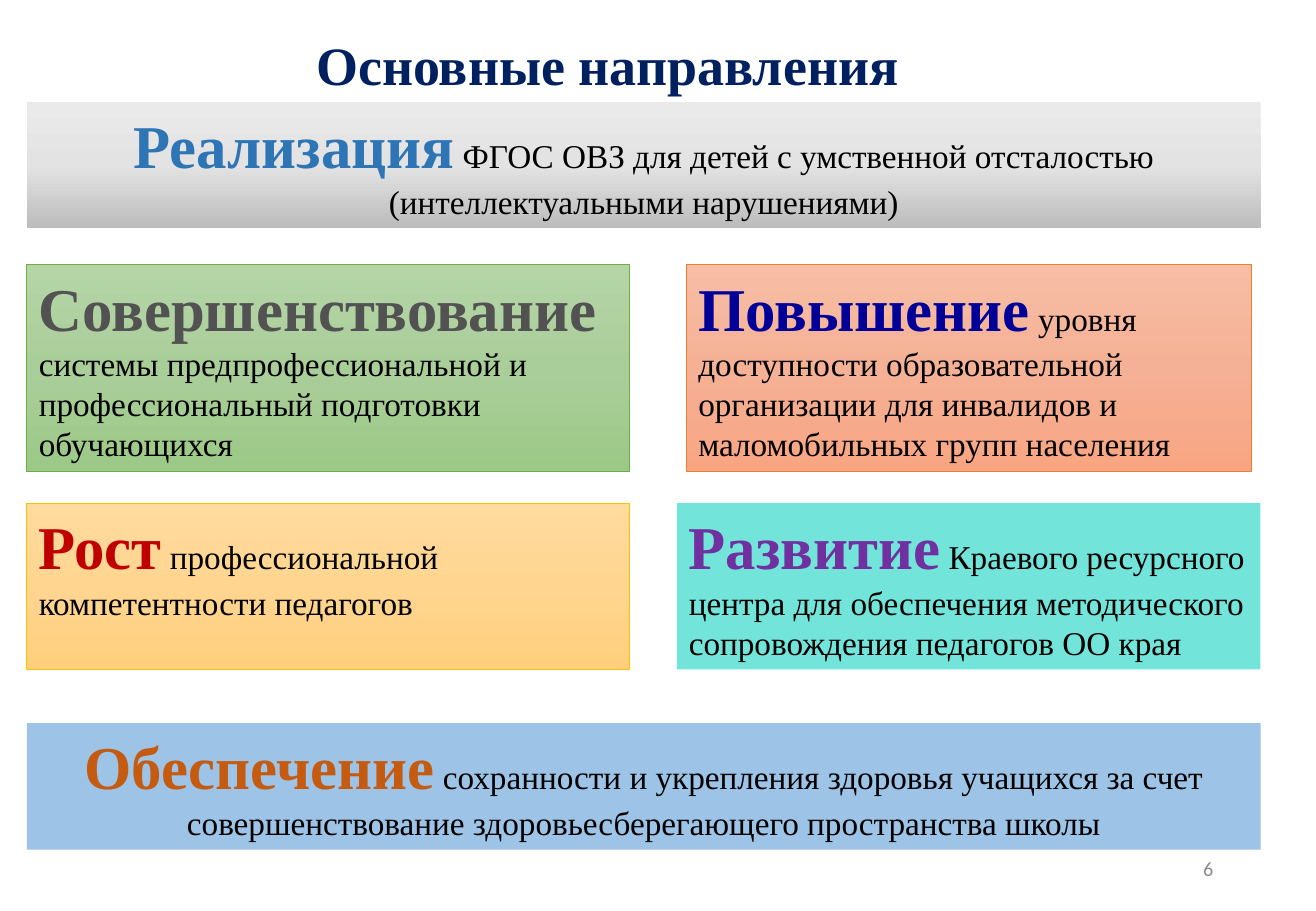
"""Builds the slide of main directions: a title, six coloured cards and a slide number."""
from copy import deepcopy

from pptx import Presentation
from pptx.dml.color import RGBColor
from pptx.enum.shapes import MSO_SHAPE
from pptx.enum.text import MSO_ANCHOR, MSO_AUTO_SIZE, PP_ALIGN
from pptx.oxml.ns import qn
from pptx.util import Pt

RECTANGLE = MSO_SHAPE.RECTANGLE
TOP, MIDDLE = MSO_ANCHOR.TOP, MSO_ANCHOR.MIDDLE
LEFT, CENTER, RIGHT = PP_ALIGN.LEFT, PP_ALIGN.CENTER, PP_ALIGN.RIGHT
NO_AUTOFIT = MSO_AUTO_SIZE.NONE

SERIF = "Times New Roman"
BLACK = RGBColor(0x00, 0x00, 0x00)
NAVY = RGBColor(0x00, 0x20, 0x60)
NUMBER_GRAY = RGBColor(0x8C, 0x8C, 0x8C)
BLUE = RGBColor(0x2E, 0x75, 0xB6)
DARK_GRAY = RGBColor(0x52, 0x52, 0x52)
DEEP_BLUE = RGBColor(0x00, 0x00, 0x99)
RED = RGBColor(0xC0, 0x00, 0x00)
PURPLE = RGBColor(0x70, 0x30, 0xA0)
RUST = RGBColor(0xC5, 0x5A, 0x11)
GREEN_LINE = RGBColor(0x70, 0xAD, 0x47)
ORANGE_LINE = RGBColor(0xED, 0x7D, 0x31)
GOLD_LINE = RGBColor(0xFF, 0xC0, 0x00)
GRAY_FILL = [RGBColor(0xEB, 0xEA, 0xEA), RGBColor(0xE4, 0xE3, 0xE3), RGBColor(0xBD, 0xBC, 0xBC)]
GREEN_FILL = [RGBColor(0xB5, 0xD5, 0xA7), RGBColor(0xAA, 0xCE, 0x9A), RGBColor(0x9C, 0xC9, 0x87)]
ORANGE_FILL = [RGBColor(0xF7, 0xBD, 0xA5), RGBColor(0xF5, 0xB1, 0x96), RGBColor(0xF8, 0xA5, 0x82)]
GOLD_FILL = [RGBColor(0xFF, 0xDB, 0x9E), RGBColor(0xFF, 0xD5, 0x90), RGBColor(0xFF, 0xD0, 0x7C)]
TURQUOISE_FILL = [RGBColor(0x72, 0xE4, 0xD9)]
SKY_FILL = [RGBColor(0x9D, 0xC3, 0xE6)]

MARGIN = 15.9
BAR_WIDTH, BAR_HEIGHT = 731.4, 75
LEFT_WIDTH = 357.2
UPPER_TOP, UPPER_HEIGHT = 156.9, 122.6
LOWER_TOP, LOWER_HEIGHT = 298.3, 98.6

CARDS = [
    ((MARGIN, 60.5, BAR_WIDTH, BAR_HEIGHT), GRAY_FILL, None, CENTER, BLUE, "Реализация",
     "ФГОС ОВЗ для детей с умственной отсталостью (интеллектуальными нарушениями)"),
    ((MARGIN, UPPER_TOP, LEFT_WIDTH, UPPER_HEIGHT), GREEN_FILL, GREEN_LINE, LEFT, DARK_GRAY,
     "Совершенствование",
     "системы предпрофессиональной и профессиональный подготовки обучающихся"),
    ((406.8, UPPER_TOP, 334.8, UPPER_HEIGHT), ORANGE_FILL, ORANGE_LINE, LEFT, DEEP_BLUE,
     "Повышение",
     "уровня доступности образовательной организации для инвалидов и маломобильных групп населения"),
    ((MARGIN, LOWER_TOP, LEFT_WIDTH, LOWER_HEIGHT), GOLD_FILL, GOLD_LINE, LEFT, RED, "Рост",
     "профессиональной компетентности педагогов"),
    ((401.2, LOWER_TOP, 345.9, LOWER_HEIGHT), TURQUOISE_FILL, None, LEFT, PURPLE, "Развитие",
     "Краевого ресурсного центра для обеспечения методического сопровождения педагогов ОО края"),
    ((MARGIN, 428.6, BAR_WIDTH, BAR_HEIGHT), SKY_FILL, None, CENTER, RUST, "Обеспечение",
     "сохранности и укрепления здоровья учащихся за счет совершенствование "
     "здоровьесберегающего пространства школы"),
]


def set_font(font, size, color, bold=False, name=SERIF):
    font.name = name
    font.size = Pt(size)
    font.bold = bold
    font.color.rgb = color


def fill_card(shape, colors):
    if len(colors) == 1:
        shape.fill.solid()
        shape.fill.fore_color.rgb = colors[0]
        return
    shape.fill.gradient()
    shape.fill.gradient_angle = 270
    stop_list = shape.element.spPr.find(qn("a:gradFill")).find(qn("a:gsLst"))
    stop_list.append(deepcopy(stop_list[0]))
    for stop, position, color in zip(shape.fill.gradient_stops, (0, 0.5, 1), colors):
        stop.position = position
        stop.color.rgb = color


presentation = Presentation()
presentation.slide_width, presentation.slide_height = Pt(780), Pt(540)
slide = presentation.slides.add_slide(presentation.slide_layouts[5])

title = slide.shapes.title
title.left, title.top, title.width, title.height = Pt(180.2), Pt(15.1), Pt(371.5), Pt(46)
title.text_frame.text = "Основные направления"
title.text_frame.auto_size = NO_AUTOFIT
title.text_frame.word_wrap = False
title.text_frame.vertical_anchor = TOP
paragraph = title.text_frame.paragraphs[0]
paragraph.alignment = LEFT
set_font(paragraph.font, 32, NAVY, bold=True)

for box, colors, line_color, alignment, key_color, key_word, details in CARDS:
    shape = slide.shapes.add_shape(RECTANGLE, *map(Pt, box))
    shape.shadow.inherit = False
    fill_card(shape, colors)
    if line_color:
        shape.line.color.rgb = line_color
        shape.line.width = Pt(0.5)
    else:
        shape.line.fill.background()
    shape.text_frame.word_wrap = True
    shape.text_frame.vertical_anchor = TOP
    paragraph = shape.text_frame.paragraphs[0]
    paragraph.alignment = alignment
    for text, size, color, bold in ((key_word, 36, key_color, True),
                                    (f" {details}", 19.7, BLACK, False)):
        run = paragraph.add_run()
        run.text = text
        set_font(run.font, size, color, bold)

number_box = slide.shapes.add_textbox(Pt(550.8), Pt(500.5), Pt(175.5), Pt(28.8))
number_box.text_frame.text = "6"
number_box.text_frame.word_wrap = True
number_box.text_frame.vertical_anchor = MIDDLE
paragraph = number_box.text_frame.paragraphs[0]
paragraph.alignment = RIGHT
set_font(paragraph.font, 12, NUMBER_GRAY, name="Calibri")

presentation.save("out.pptx")
